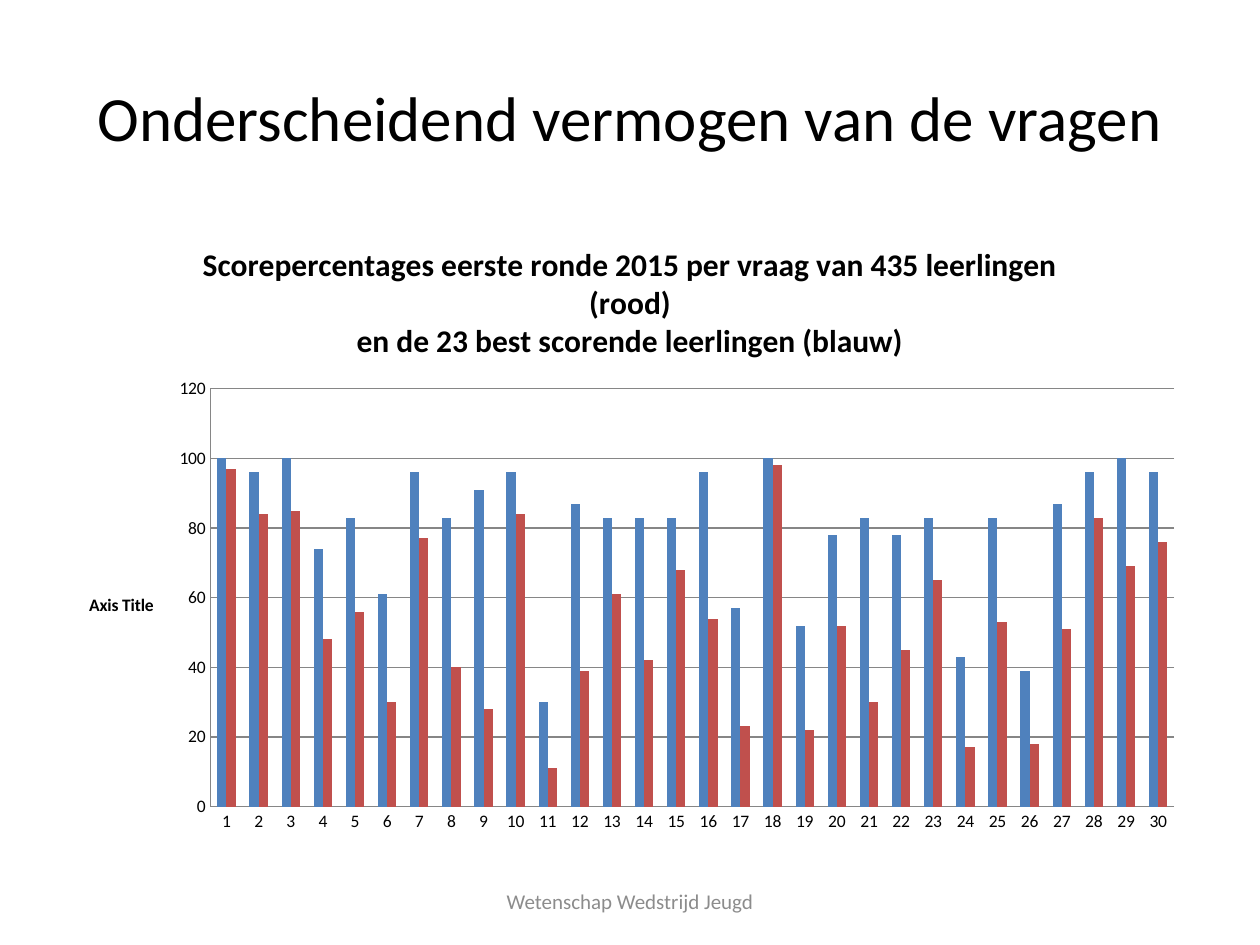
import pptx
import pptx.chart.data
import pptx.dml.color
import pptx.enum.chart
import pptx.enum.text
import pptx.oxml
import pptx.oxml.ns
import pptx.util

Pt = pptx.util.Pt
RGB = pptx.dml.color.RGBColor
BLACK = RGB(0x00, 0x00, 0x00)
GRAY = RGB(0x8C, 0x8C, 0x8C)
LINE = RGB(0x86, 0x86, 0x86)
BLUE = RGB(0x4F, 0x81, 0xBD)
RED = RGB(0xC0, 0x50, 0x4D)
FONT = "Calibri"

BEST = [100, 96, 100, 74, 83, 61, 96, 83, 91, 96, 30, 87, 83, 83, 83,
        96, 57, 100, 52, 78, 83, 78, 83, 43, 83, 39, 87, 96, 100, 96]
ALL = [97, 84, 85, 48, 56, 30, 77, 40, 28, 84, 11, 39, 61, 42, 68,
       54, 23, 98, 22, 52, 30, 45, 65, 17, 53, 18, 51, 83, 69, 76]
HEAD = ["Scorepercentages eerste ronde 2015 per vraag van 435 leerlingen (rood)",
        "en de 23 best scorende leerlingen (blauw)"]


def set_font(font, size, color=BLACK, bold=False):
    font.name = FONT
    font.size = Pt(size)
    font.bold = bold
    font.color.rgb = color


def add_text(slide, text, box, size, color):
    frame = slide.shapes.add_textbox(*map(Pt, box)).text_frame
    frame.word_wrap = True
    frame.vertical_anchor = pptx.enum.text.MSO_ANCHOR.MIDDLE
    para = frame.paragraphs[0]
    para.text = text
    para.alignment = pptx.enum.text.PP_ALIGN.CENTER
    set_font(para.font, size, color)


def fill_title(frame, lines, size):
    frame.text = "\n".join(lines)
    for para in frame.paragraphs:
        set_font(para.font, size, bold=True)


def place_plot(chart, left, top, width, height):
    area = chart._chartSpace.chart.plotArea
    for old in area.findall(pptx.oxml.ns.qn("c:layout")):
        area.remove(old)
    area.insert(0, pptx.oxml.parse_xml(
        f'<c:layout {pptx.oxml.ns.nsdecls("c")}><c:manualLayout>'
        '<c:layoutTarget val="inner"/><c:xMode val="edge"/><c:yMode val="edge"/>'
        f'<c:x val="{left}"/><c:y val="{top}"/><c:w val="{width}"/><c:h val="{height}"/>'
        '</c:manualLayout></c:layout>'))


def style_axes(chart):
    for axis in (chart.category_axis, chart.value_axis):
        axis.major_tick_mark = pptx.enum.chart.XL_TICK_MARK.NONE
        axis.minor_tick_mark = pptx.enum.chart.XL_TICK_MARK.NONE
        axis.format.line.color.rgb = LINE
        axis.format.line.width = Pt(0.75)
    axis = chart.value_axis
    axis.minimum_scale, axis.maximum_scale, axis.major_unit = 0, 120, 20
    axis.has_major_gridlines = True
    axis.major_gridlines.format.line.color.rgb = LINE
    axis.major_gridlines.format.line.width = Pt(0.75)
    frame = axis.axis_title.text_frame
    fill_title(frame, ["Axis Title"], 10)
    body = frame._txBody.bodyPr
    body.set("rot", "0")
    body.set("vert", "horz")


def add_bars(slide):
    data = pptx.chart.data.CategoryChartData()
    data.categories = [str(n) for n in range(1, len(BEST) + 1)]
    data.add_series("Series 1", BEST)
    data.add_series("Series 2", ALL)
    chart = slide.shapes.add_chart(
        pptx.enum.chart.XL_CHART_TYPE.COLUMN_CLUSTERED,
        Pt(36), Pt(126), Pt(648), Pt(356.4), data).chart
    set_font(chart.font, 10)
    chart.has_legend = False
    fill_title(chart.chart_title.text_frame, HEAD, 18)
    style_axes(chart)
    plot = chart.plots[0]
    plot.gap_width = 150
    plot.overlap = 0
    plot.vary_by_categories = False
    for series, color in zip(plot.series, (BLUE, RED)):
        series.format.fill.solid()
        series.format.fill.fore_color.rgb = color
    place_plot(chart, 0.13, 0.27, 0.85, 0.67)


def main():
    deck = pptx.Presentation()
    deck.slide_width, deck.slide_height = Pt(720), Pt(540)
    slide = deck.slides.add_slide(deck.slide_layouts[6])
    add_text(slide, "Onderscheidend vermogen van de vragen",
             (36, 21.6, 648, 90), 36, BLACK)
    add_bars(slide)
    add_text(slide, "Wetenschap Wedstrijd Jeugd",
             (246, 500.5, 228, 28.75), 12, GRAY)
    deck.save("out.pptx")


if __name__ == "__main__":
    main()
